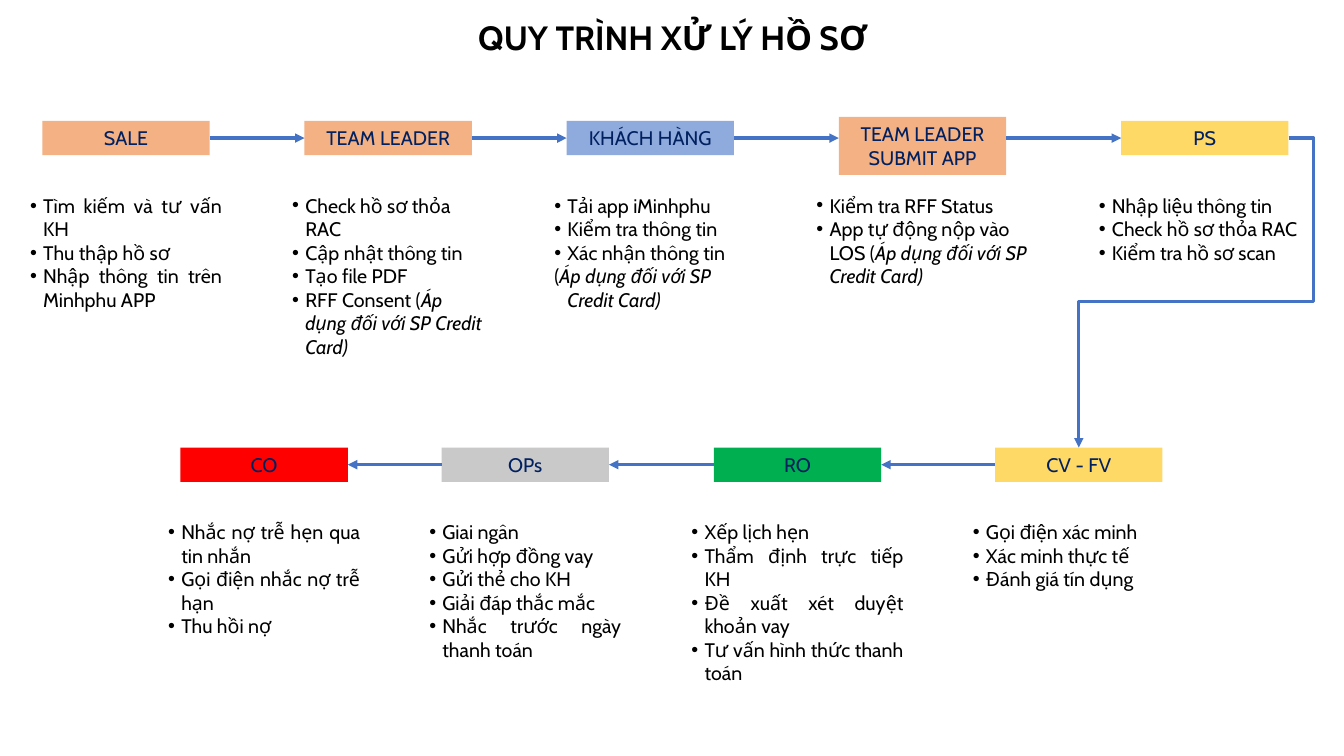
from dataclasses import dataclass
from itertools import pairwise

from lxml.etree import SubElement
from pptx import Presentation
from pptx.dml.color import RGBColor
from pptx.enum.shapes import MSO_CONNECTOR as LINK, MSO_SHAPE as SHAPE
from pptx.enum.text import MSO_ANCHOR as ANCHOR, MSO_AUTO_SIZE as FIT, PP_ALIGN as ALIGN
from pptx.oxml.ns import qn
from pptx.util import Inches, Pt

COLORS = {
    "black": "000000", "navy": "002060", "arrow": "4472C4",
    "orange": "F4B183", "blue": "8FAADC", "yellow": "FFD966",
    "red": "FF0000", "gray": "C9C9C9", "green": "00B050",
}
FONT = "Cabin"
STEP_W, STEP_H = 1.66, 0.34
TASKS_DROP = 0.67
TOP_ROW, BOTTOM_ROW = 1.2, 4.44
HANGING = 0.13
LINE_H = 0.235
LOOP_OUT, LOOP_Y = 13.03, 2.99


@dataclass
class Step:
    title: list[str]
    left: float
    color: str
    tasks: list[str]
    task_lines: int
    task_width: float = 2.1
    align: ALIGN = ALIGN.JUSTIFY


TOP_STEPS = [
    Step(["SALE"], 0.42, "orange",
         ["Tìm kiếm và tư vấn KH", "Thu thập hồ sơ", "Nhập thông tin trên Minhphu APP"], 5),
    Step(["TEAM LEADER"], 3.02, "orange",
         ["Check hồ sơ thỏa RAC", "Cập nhật thông tin", "Tạo file PDF",
          "RFF Consent (Áp dụng đối với SP Credit Card)"], 7, align=ALIGN.LEFT),
    Step(["KHÁCH HÀNG"], 5.62, "blue",
         ["Tải app iMinhphu", "Kiểm tra thông tin", "Xác nhận thông tin",
          "(Áp dụng đối với SP Credit Card)"], 5, align=ALIGN.LEFT),
    Step(["TEAM LEADER", "SUBMIT APP"], 8.32, "orange",
         ["Kiểm tra RFF Status",
          "App tự động nộp vào LOS (Áp dụng đối với SP Credit Card)"], 4, 2.3, ALIGN.LEFT),
    Step(["PS"], 11.12, "yellow",
         ["Nhập liệu thông tin", "Check hồ sơ thỏa RAC", "Kiểm tra hồ sơ scan"], 3, 2.3),
]
BOTTOM_STEPS = [
    Step(["CV - FV"], 9.87, "yellow",
         ["Gọi điện xác minh", "Xác minh thực tế", "Đánh giá tín dụng"], 3, 2.3),
    Step(["RO"], 7.08, "green",
         ["Xếp lịch hẹn", "Thẩm định trực tiếp KH", "Đề xuất xét duyệt khoản vay",
          "Tư vấn hình thức thanh toán"], 7, 2.3),
    Step(["OPs"], 4.38, "gray",
         ["Giai ngân", "Gửi hợp đồng vay", "Gửi thẻ cho KH", "Giải đáp thắc mắc",
          "Nhắc trước ngày thanh toán"], 6),
    Step(["CO"], 1.79, "red",
         ["Nhắc nợ trễ hẹn qua tin nhắn", "Gọi điện nhắc nợ trễ hạn", "Thu hồi nợ"], 5),
]


def rgb(name: str) -> RGBColor:
    return RGBColor.from_string(COLORS[name])


def hang(paragraph, bullet: bool) -> None:
    props = paragraph._p.get_or_add_pPr()
    props.set("marL", str(Inches(HANGING)))
    props.set("indent", str(-Inches(HANGING)))
    if bullet:
        SubElement(props, qn("a:buFont")).set("typeface", "Arial")
        SubElement(props, qn("a:buChar")).set("char", "•")


def write(frame, lines: list[str], *, size: float = 14, color: str = "black",
          bold: bool = False, align: ALIGN = ALIGN.CENTER, bullets: bool = False,
          anchor: ANCHOR = ANCHOR.TOP) -> None:
    frame.word_wrap = True
    frame.auto_size = FIT.SHAPE_TO_FIT_TEXT
    frame.vertical_anchor = anchor
    for index, line in enumerate(lines):
        paragraph = frame.add_paragraph() if index else frame.paragraphs[0]
        if bullets:
            hang(paragraph, bullet=not line.startswith("("))
        paragraph.alignment = align
        lead, bracket, remark = line.partition("(")
        for text, italic in ((lead + bracket, False), (remark, True)):
            if text:
                run = paragraph.add_run()
                run.text = text
                run.font.name = FONT
                run.font.size = Pt(size)
                run.font.bold = bold
                run.font.italic = italic
                run.font.color.rgb = rgb(color)


def draw_step(slide, step: Step, top: float) -> None:
    extra = LINE_H * (len(step.title) - 1)
    box = slide.shapes.add_shape(
        SHAPE.RECTANGLE, Inches(step.left), Inches(top - (0.04 if extra else 0)),
        Inches(STEP_W), Inches(STEP_H + extra))
    box.shadow.inherit = False
    box.fill.solid()
    box.fill.fore_color.rgb = rgb(step.color)
    box.line.fill.background()
    write(box.text_frame, step.title, color="navy", anchor=ANCHOR.MIDDLE)

    task_list = slide.shapes.add_textbox(
        Inches(step.left - (step.task_width - STEP_W) / 2), Inches(top + TASKS_DROP),
        Inches(step.task_width), Inches(0.1 + LINE_H * step.task_lines))
    write(task_list.text_frame, step.tasks, align=step.align, bullets=True)


def draw_arrow(slide, start: tuple[float, float], end: tuple[float, float],
               kind: LINK = LINK.STRAIGHT):
    arrow = slide.shapes.add_connector(kind, *map(Inches, (*start, *end)))
    arrow.line.color.rgb = rgb("arrow")
    arrow.line.width = Pt(2.25)
    SubElement(arrow.line._get_or_add_ln(), qn("a:tailEnd")).set("type", "triangle")
    SubElement(arrow._element.spPr, qn("a:effectLst"))
    return arrow


def draw_loop(slide, start: tuple[float, float], end: tuple[float, float]) -> None:
    loop = draw_arrow(slide, start, end, LINK.ELBOW)
    geometry = loop._element.spPr.find(qn("a:prstGeom"))
    geometry.set("prst", "bentConnector4")
    guides = geometry.find(qn("a:avLst"))
    bends = ((start[0] - LOOP_OUT) / (start[0] - end[0]),
             (LOOP_Y - start[1]) / (end[1] - start[1]))
    for number, bend in enumerate(bends, 1):
        guide = SubElement(guides, qn("a:gd"))
        guide.set("name", f"adj{number}")
        guide.set("fmla", f"val {round(bend * 100000)}")


def main() -> None:
    deck = Presentation()
    deck.slide_width, deck.slide_height = Inches(13.33), Inches(7.5)
    slide = deck.slides.add_slide(deck.slide_layouts[6])

    heading = slide.shapes.add_textbox(Inches(3.21), Inches(0.12), Inches(6.92), Inches(0.51))
    write(heading.text_frame, ["QUY TRÌNH XỬ LÝ HỒ SƠ"], size=24, bold=True)

    for steps, top in ((TOP_STEPS, TOP_ROW), (BOTTOM_STEPS, BOTTOM_ROW)):
        for step in steps:
            draw_step(slide, step, top)

    top_axis, bottom_axis = TOP_ROW + STEP_H / 2, BOTTOM_ROW + STEP_H / 2
    for step, following in pairwise(TOP_STEPS):
        draw_arrow(slide, (step.left + STEP_W, top_axis), (following.left, top_axis))
    for step, following in pairwise(BOTTOM_STEPS):
        draw_arrow(slide, (step.left, bottom_axis), (following.left + STEP_W, bottom_axis))
    draw_loop(slide, (TOP_STEPS[-1].left + STEP_W, top_axis),
              (BOTTOM_STEPS[0].left + STEP_W / 2, BOTTOM_ROW))

    deck.save("out.pptx")


if __name__ == "__main__":
    main()
